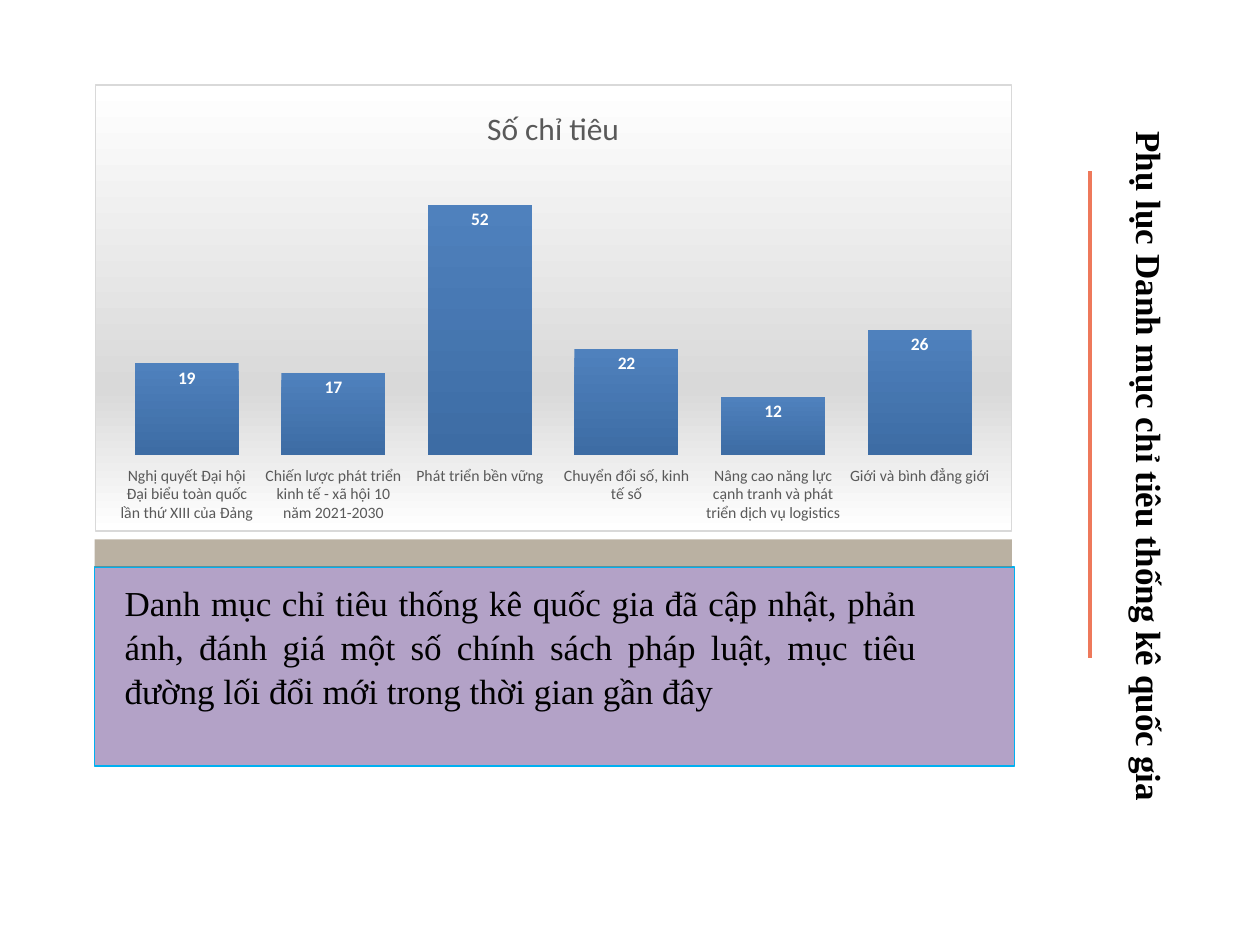
from dataclasses import dataclass
from typing import Optional

from lxml.etree import SubElement
from pptx import Presentation
from pptx.chart.data import CategoryChartData
from pptx.dml.color import RGBColor
from pptx.enum.chart import XL_CHART_TYPE, XL_LABEL_POSITION, XL_TICK_LABEL_POSITION, XL_TICK_MARK
from pptx.enum.shapes import MSO_CONNECTOR, MSO_SHAPE
from pptx.enum.text import MSO_ANCHOR, PP_ALIGN
from pptx.oxml import parse_xml
from pptx.oxml.ns import nsdecls, qn
from pptx.util import Pt

SERIF, SANS = "Times New Roman", "Calibri"
NAME = "Số chỉ tiêu"
COUNTS = {
    "Nghị quyết Đại hội Đại biểu toàn quốc lần thứ XIII của Đảng": 19,
    "Chiến lược phát triển kinh tế - xã hội 10 năm 2021-2030": 17,
    "Phát triển bền vững": 52,
    "Chuyển đổi số, kinh tế số": 22,
    "Nâng cao năng lực cạnh tranh và phát triển dịch vụ logistics": 12,
    "Giới và bình đẳng giới": 26,
}


@dataclass
class Box:
    left: float
    top: float
    width: float
    height: float

    def place(self) -> tuple:
        return tuple(Pt(n) for n in (self.left, self.top, self.width, self.height))


@dataclass
class Panel:
    box: Box
    fill: str
    line: Optional[str] = None
    alpha: Optional[int] = None


@dataclass
class Label:
    box: Box
    text: str
    align: PP_ALIGN
    bold: bool = False
    turn: int = 0
    pitch: float = 1.0


PANELS = [
    Panel(Box(54, 324, 525.6, 113.8), "B3A2C7", line="00B0F0"),
    Panel(Box(54, 308.2, 524.2, 15.8), "908269", alpha=62),
]
LABELS = [
    Label(Box(64.1, 324, 466.6, 118),
          "Danh mục chỉ tiêu thống kê quốc gia đã cập nhật, phản ánh, đánh giá một số "
          "chính sách pháp luật, mục tiêu đường lối đổi mới trong thời gian gần đây",
          PP_ALIGN.JUSTIFY, pitch=1.05),
    Label(Box(447.1, 243.4, 404.6, 54), "Phụ lục Danh mục chỉ tiêu thống kê quốc gia",
          PP_ALIGN.LEFT, bold=True, turn=90),
]


def tint(color, code: str) -> None:
    color.rgb = RGBColor.from_string(code)


def style(font, code: str, **form) -> None:
    for key, value in form.items():
        setattr(font, key, value)
    tint(font.color, code)


def fade(stops: dict) -> str:
    """Return the XML of a top-down gradient fill."""
    marks = "".join(f'<a:gs pos="{pos * 1000}"><a:srgbClr val="{code}"/></a:gs>'
                    for pos, code in stops.items())
    return f'<a:gradFill><a:gsLst>{marks}</a:gsLst><a:lin ang="5400000" scaled="0"/></a:gradFill>'


def draw_panel(slide, panel: Panel) -> None:
    shape = slide.shapes.add_shape(MSO_SHAPE.RECTANGLE, *panel.box.place())
    shape.shadow.inherit = False
    shape.fill.solid()
    tint(shape.fill.fore_color, panel.fill)
    if panel.alpha:
        code = next(shape.element.spPr.iter(qn("a:srgbClr")))
        SubElement(code, qn("a:alpha"), val=str(panel.alpha * 1000))
    if panel.line:
        tint(shape.line.color, panel.line)
        shape.line.width = Pt(0.75)
    else:
        shape.line.fill.background()


def draw_label(slide, label: Label) -> None:
    shape = slide.shapes.add_textbox(*label.box.place())
    shape.rotation = label.turn
    frame = shape.text_frame
    form = {"word_wrap": True, "vertical_anchor": MSO_ANCHOR.TOP}
    form |= {f"margin_{side}": Pt(7.2) for side in ("left", "top", "right", "bottom")}
    for key, value in form.items():
        setattr(frame, key, value)
    para = frame.paragraphs[0]
    para.alignment, para.line_spacing = label.align, label.pitch
    run = para.add_run()
    run.text = label.text
    style(run.font, "000000", name=SERIF, size=Pt(20), bold=label.bold)


def draw_rule(slide) -> None:
    rule = slide.shapes.add_connector(MSO_CONNECTOR.STRAIGHT, Pt(622.8), Pt(97.9),
                                      Pt(622.8), Pt(375.8))
    tint(rule.line.color, "EE795B")
    rule.line.width = Pt(2.25)
    SubElement(rule.element.spPr, qn("a:effectLst"))


def draw_chart(slide, box: Box) -> None:
    data = CategoryChartData()
    data.categories = list(COUNTS)
    data.add_series(NAME, list(COUNTS.values()))
    chart = slide.shapes.add_chart(XL_CHART_TYPE.COLUMN_CLUSTERED, *box.place(), data).chart
    style(chart.font, "000000", name=SANS, size=Pt(10))
    chart.has_legend = False
    chart.has_title = True
    title = chart.chart_title.text_frame
    title.text = NAME
    style(title.paragraphs[0].runs[0].font, "595959", name=SANS, size=Pt(18), bold=False)

    axis = chart.category_axis
    axis.major_tick_mark = XL_TICK_MARK.NONE
    axis.tick_label_position = XL_TICK_LABEL_POSITION.LOW
    axis.format.line.fill.background()
    style(axis.tick_labels.font, "595959", name=SANS, size=Pt(9))
    scale = chart.value_axis
    form = {"visible": False, "has_major_gridlines": False,
            "minimum_scale": 0, "maximum_scale": 60}
    for key, value in form.items():
        setattr(scale, key, value)

    plot = chart.plots[0]
    plot.gap_width, plot.vary_by_categories = 41, False
    bars = plot.series[0]
    bars.format.line.fill.background()
    bars.format.fill.gradient()
    blend = next(bars._element.iter(qn("a:gradFill")))
    paint = fade({0: "4F81BD", 100: "3D6CA4"}).replace("<a:gradFill>", f"<a:gradFill {nsdecls('a')}>")
    blend.getparent().replace(blend, parse_xml(paint))
    tags = bars.data_labels
    tags.show_value, tags.position = True, XL_LABEL_POSITION.INSIDE_END
    style(tags.font, "FFFFFF", name=SANS, size=Pt(10), bold=True)

    back = parse_xml(
        f"<c:spPr {nsdecls('c', 'a')}>{fade({0: 'FFFFFF', 68: 'D9D9D9', 100: 'FFFFFF'})}"
        f'<a:ln w="{Pt(0.75)}"><a:solidFill><a:srgbClr val="D9D9D9"/></a:solidFill></a:ln></c:spPr>')
    chart._chartSpace.find(qn("c:chart")).addnext(back)


def main() -> None:
    deck = Presentation()
    deck.slide_width, deck.slide_height = Pt(720), Pt(540)
    slide = deck.slides.add_slide(deck.slide_layouts[6])
    for panel in PANELS:
        draw_panel(slide, panel)
    for label in LABELS:
        draw_label(slide, label)
    draw_rule(slide)
    draw_chart(slide, Box(54, 48.2, 524.2, 255.6))
    deck.save("out.pptx")


if __name__ == "__main__":
    main()
